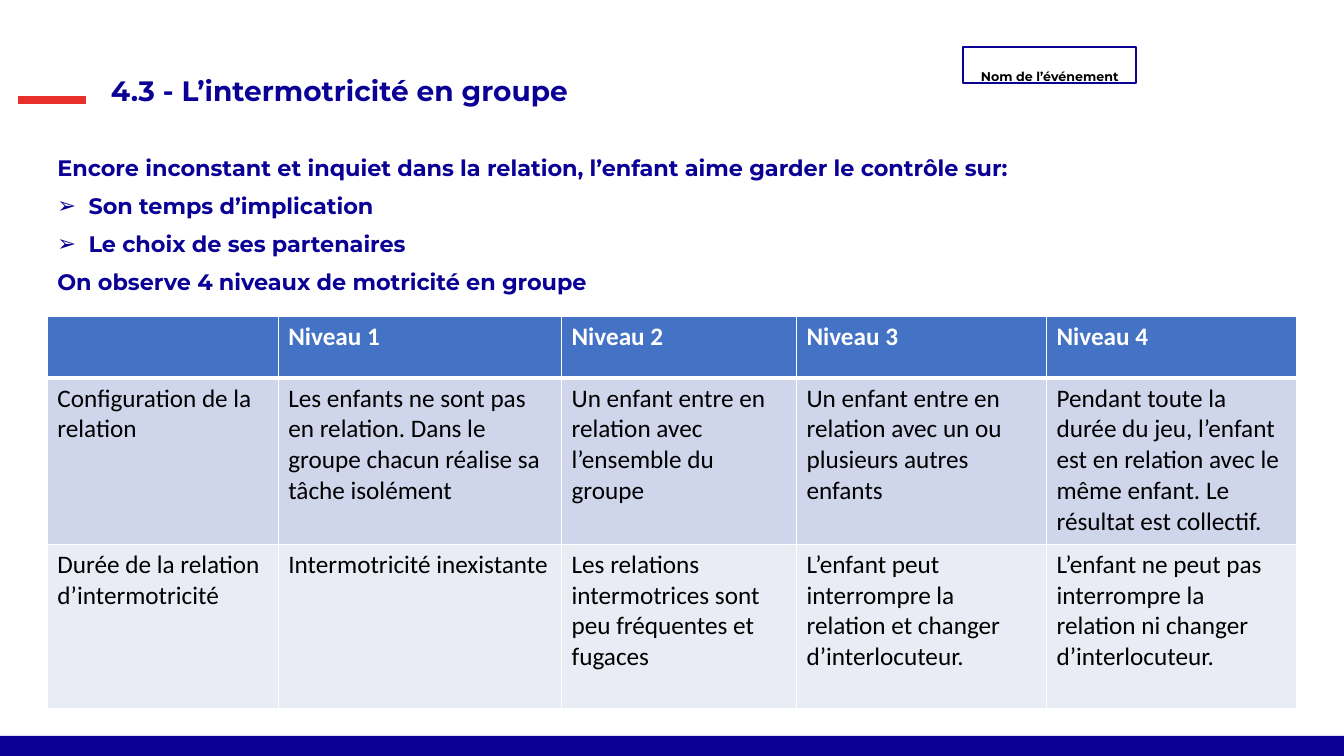
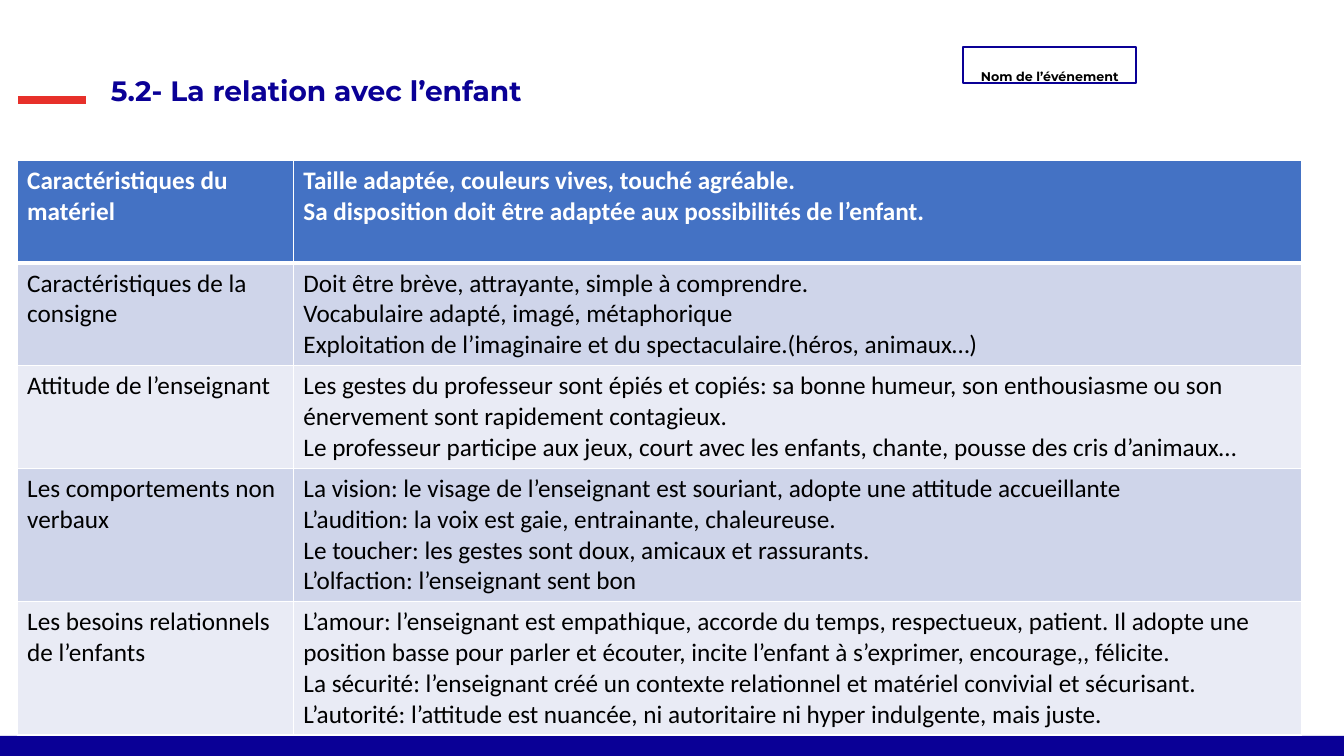
from lxml import etree
from pptx import Presentation
from pptx import util as u
from pptx.dml import color
from pptx.enum import shapes, text
from pptx.oxml import ns

NAVY, RED, BLACK, WHITE = "0A0096", "E7302A", "000000", "FFFFFF"
HEAD, BANDS = "4472C4", ("CFD5EA", "E9EBF5")
LEFT, MID = text.PP_ALIGN.LEFT, text.PP_ALIGN.CENTER
TOP = text.MSO_ANCHOR.TOP

LEVELS = [
    ["", "Niveau 1", "Niveau 2", "Niveau 3", "Niveau 4"],
    ["Configuration de la relation",
     "Les enfants ne sont pas en relation. Dans le groupe chacun réalise sa tâche isolément",
     "Un enfant entre en relation avec l’ensemble du groupe",
     "Un enfant entre en relation avec un ou plusieurs autres enfants",
     "Pendant toute la durée du jeu, l’enfant est en relation avec le même enfant. "
     "Le résultat est collectif."],
    ["Durée de la relation d’intermotricité",
     "Intermotricité inexistante",
     "Les relations intermotrices sont peu fréquentes et fugaces",
     "L’enfant peut interrompre la relation et changer d’interlocuteur.",
     "L’enfant ne peut pas interrompre la relation ni changer d’interlocuteur."],
]

CARE = [
    ["Caractéristiques du matériel",
     "Taille adaptée, couleurs vives, touché agréable.\n"
     "Sa disposition doit être adaptée aux possibilités de l’enfant."],
    ["Caractéristiques de la consigne",
     "Doit être brève, attrayante, simple à comprendre.\n"
     "Vocabulaire adapté, imagé, métaphorique\n"
     "Exploitation de l’imaginaire et du spectaculaire.(héros, animaux…)"],
    ["Attitude de l’enseignant",
     "Les gestes du professeur sont épiés et copiés: sa bonne humeur, son enthousiasme "
     "ou son énervement sont rapidement contagieux.\n"
     "Le professeur participe aux jeux, court avec les enfants, chante, "
     "pousse des cris d’animaux…"],
    ["Les comportements non verbaux",
     "La vision: le visage de l’enseignant est souriant, adopte une attitude accueillante\n"
     "L’audition: la voix est gaie, entrainante, chaleureuse.\n"
     "Le toucher: les gestes sont doux, amicaux et rassurants.\n"
     "L’olfaction: l’enseignant sent bon"],
    ["Les besoins relationnels de l’enfants",
     "L’amour: l’enseignant est empathique, accorde du temps, respectueux, patient. "
     "Il adopte une position basse pour parler et écouter, incite l’enfant à s’exprimer, "
     "encourage,, félicite.\n"
     "La sécurité: l’enseignant créé un contexte relationnel et matériel convivial et sécurisant.\n"
     "L’autorité: l’attitude est nuancée, ni autoritaire ni hyper indulgente, mais juste."],
]


def rgb(code):
    return color.RGBColor.from_string(code)


def inch(*sizes):
    return [u.Inches(size) for size in sizes]


def apply(thing, **values):
    for name, value in values.items():
        setattr(thing, name, value)


def node(owner, tag, **values):
    return etree.SubElement(owner, ns.qn(tag), **values)


class Deck:
    """Holds the house style and the slide being built."""

    def __init__(self):
        self.prs = Presentation()
        self.prs.slide_width, self.prs.slide_height = inch(13.33, 7.5)

    def font(self, para, size, ink, bold=True, name="Montserrat"):
        apply(para.font, size=u.Pt(size), bold=bold, name=name)
        para.font.color.rgb = rgb(ink)

    def page(self, title):
        self.slide = self.prs.slides.add_slide(self.prs.slide_layouts[5])
        self.shapes = self.slide.shapes
        self.band()
        self.event()
        self.dash()
        self.title(title)

    def rect(self, *box):
        shape = self.shapes.add_shape(shapes.MSO_SHAPE.RECTANGLE, *inch(*box))
        shape.shadow.inherit = False
        return shape

    def band(self):
        band = self.rect(0, 7.3, 13.33, 0.2)
        band.fill.solid()
        band.fill.fore_color.rgb = rgb(NAVY)
        band.line.fill.background()

    def event(self):
        event = self.rect(9.55, 0.47, 1.72, 0.35)
        event.fill.background()
        event.line.color.rgb = rgb(NAVY)
        event.line.width = u.Pt(1.5)
        frame = event.text_frame
        apply(frame, text="Nom de l’événement", margin_left=0, margin_right=0,
              margin_top=0, margin_bottom=0)
        para = frame.paragraphs[0]
        apply(para, alignment=MID, line_spacing=2.5, space_after=u.Pt(8))
        self.font(para, 9, BLACK)

    def dash(self):
        dash = self.shapes.add_connector(
            shapes.MSO_CONNECTOR.STRAIGHT, *inch(0.18, 0.99, 0.85, 0.99))
        dash.line.color.rgb = rgb(RED)
        dash.line.width = u.Pt(6)
        node(dash.element.spPr, "a:effectLst")

    def title(self, words):
        title = self.shapes.title
        left, top, width, height = inch(1, 0.72, 8.82, 0.67)
        apply(title, left=left, top=top, width=width, height=height)
        frame = title.text_frame
        apply(frame, text=words, word_wrap=True, vertical_anchor=TOP,
              auto_size=text.MSO_AUTO_SIZE.NONE)
        para = frame.paragraphs[0]
        apply(para, alignment=LEFT, line_spacing=0.9)
        self.font(para, 20, NAVY)

    def body(self, box, lines):
        frame = self.shapes.add_textbox(*inch(*box)).text_frame
        apply(frame, text="\n".join(words for words, _ in lines), word_wrap=True)
        for row, (para, (_, listed)) in enumerate(zip(frame.paragraphs, lines)):
            if listed:
                props = para._p.get_or_add_pPr()
                indent = u.Inches(0.31)
                props.set("marL", str(indent))
                props.set("indent", str(-indent))
                node(props, "a:buFont", typeface="Arial")
                node(props, "a:buChar", char="➢")
            apply(para, line_spacing=0.9, space_before=u.Pt(10 if row else 0))
            self.font(para, 16, NAVY)

    def edges(self, cell, row):
        props = cell._tc.get_or_add_tcPr()
        widths = {"L": 1, "R": 1, "T": 3 if row == 1 else 1, "B": 1 if row else 3}
        for side, width in widths.items():
            line = node(props, f"a:ln{side}", w=str(u.Pt(width)))
            node(node(line, "a:solidFill"), "a:srgbClr", val=WHITE)

    def table(self, left, top, cols, rows, data):
        box = inch(left, top, sum(cols), sum(rows))
        table = self.shapes.add_table(len(rows), len(cols), *box).table
        for col, width in zip(table.columns, inch(*cols)):
            col.width = width
        for row, (height, words) in enumerate(zip(inch(*rows), data)):
            table.rows[row].height = height
            for col, label in enumerate(words):
                cell = table.cell(row, col)
                self.edges(cell, row)
                cell.fill.solid()
                cell.fill.fore_color.rgb = rgb(BANDS[(row - 1) % 2] if row else HEAD)
                cell.text = label
                for para in cell.text_frame.paragraphs:
                    self.font(para, 18, BLACK if row else WHITE, not row, "Calibri")


def main():
    deck = Deck()
    deck.page("4.3 - L’intermotricité en groupe")
    deck.body((0.47, 1.51, 12.52, 1.6), [
        ("Encore inconstant et inquiet dans la relation, l’enfant aime garder le contrôle sur:", False),
        ("Son temps d’implication", True),
        ("Le choix de ses partenaires", True),
        ("On observe 4 niveaux de motricité en groupe", False),
    ])
    deck.table(0.47, 3.14, (2.29, 2.81, 2.33, 2.48, 2.48), (0.61, 1.65, 1.63), LEVELS)

    deck.page("5.2- La relation avec l’enfant")
    deck.table(0.17, 1.59, (2.74, 10), (1.02, 1.02, 1.02, 1.32, 1.32), CARE)
    deck.prs.save("out.pptx")


if __name__ == "__main__":
    main()
